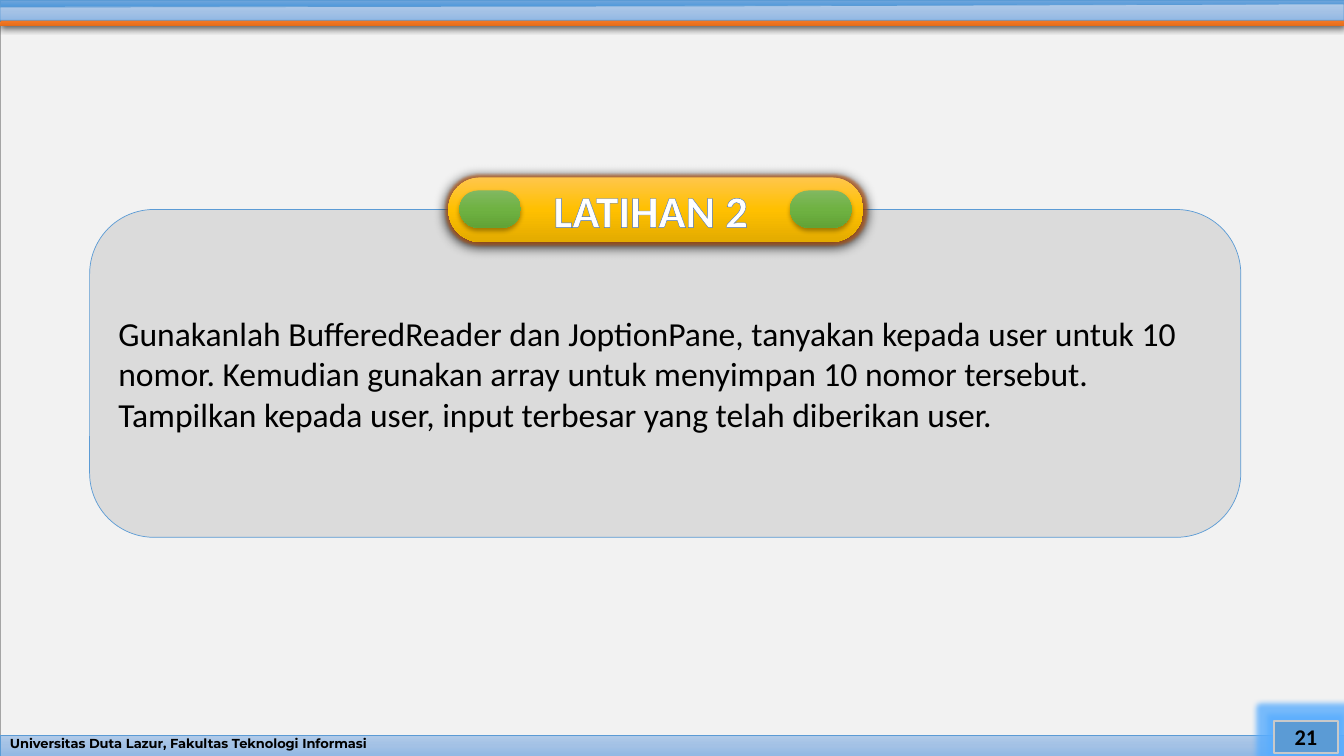
from dataclasses import dataclass
from typing import Optional, Union

from lxml import etree
from pptx import Presentation
from pptx import util as u
from pptx.dml.color import RGBColor
from pptx.enum import shapes, text
from pptx.oxml import ns

SLIDE_W, SLIDE_H = 33.87, 19.05

BLACK = RGBColor(0x00, 0x00, 0x00)
WHITE = RGBColor(0xFF, 0xFF, 0xFF)
PAPER = RGBColor(0xF2, 0xF2, 0xF2)
PANEL_GREY = RGBColor(0xDB, 0xDB, 0xDB)
BADGE_EDGE = RGBColor(0xC9, 0xC9, 0xC9)
PAPER_EDGE = RGBColor(0xA5, 0xA5, 0xA5)
BLUE = RGBColor(0x5B, 0x9B, 0xD5)
GLOW_BLUE = RGBColor(0x5A, 0xAE, 0xFF)
GLOW_RUST = RGBColor(0xC5, 0x5A, 0x11)
OUTLINE_BLUE = RGBColor(0x44, 0x72, 0xC4)


@dataclass(frozen=True)
class Gradient:
    """Colours from top to bottom."""
    top: RGBColor
    middle: RGBColor
    bottom: RGBColor


ORANGE = Gradient(RGBColor(0xF1, 0x8C, 0x57), RGBColor(0xF6, 0x7B, 0x28), RGBColor(0xE5, 0x6C, 0x19))
PALE_BLUE = Gradient(RGBColor(0xB1, 0xCB, 0xE9), RGBColor(0xA3, 0xC1, 0xE5), RGBColor(0x93, 0xB9, 0xE4))
DEEP_BLUE = Gradient(RGBColor(0x71, 0xA6, 0xDB), RGBColor(0x55, 0x9B, 0xDB), RGBColor(0x44, 0x8A, 0xCA))
GOLD = Gradient(RGBColor(0xFF, 0xC6, 0x4B), RGBColor(0xFF, 0xC0, 0x00), RGBColor(0xE3, 0xAB, 0x00))
GREEN = Gradient(RGBColor(0x81, 0xB8, 0x61), RGBColor(0x6F, 0xB2, 0x42), RGBColor(0x62, 0xA3, 0x36))


@dataclass(frozen=True)
class Shadow:
    alpha: int
    blur: float
    distance: float


@dataclass(frozen=True)
class Glow:
    color: RGBColor
    radius: float
    alpha: int


@dataclass(frozen=True)
class Look:
    fill: Union[RGBColor, Gradient]
    edge: Optional[RGBColor] = None
    edge_width: float = 0.5
    shadow: Optional[Shadow] = None
    glow: Optional[Glow] = None


@dataclass(frozen=True)
class Block:
    box: tuple
    look: Look
    rounding: Optional[float] = None


def add_xml(parent, tag: str, **attributes):
    return etree.SubElement(parent, ns.qn(tag), {k: str(v) for k, v in attributes.items()})


def add_color(parent, color: RGBColor, alpha: int = 100) -> None:
    srgb = add_xml(parent, "a:srgbClr", val=color)
    if alpha < 100:
        add_xml(srgb, "a:alpha", val=alpha * 1000)


def dress(shape, look: Look) -> None:
    """Apply fill, edge, glow and shadow."""
    if isinstance(look.fill, Gradient):
        shape.fill.gradient()
        shape.fill.gradient_angle = 270
        stops = shape.element.spPr.find(".//" + ns.qn("a:gsLst"))
        for stop in list(stops):
            stops.remove(stop)
        for i, color in enumerate((look.fill.top, look.fill.middle, look.fill.bottom)):
            add_color(add_xml(stops, "a:gs", pos=i * 50000), color)
    else:
        shape.fill.solid()
        shape.fill.fore_color.rgb = look.fill
    if look.edge is None:
        shape.line.fill.background()
    else:
        shape.line.color.rgb = look.edge
        shape.line.width = u.Pt(look.edge_width)
    shape.shadow.inherit = False
    effects = shape.element.spPr.find(ns.qn("a:effectLst"))
    if look.glow:
        glow = add_xml(effects, "a:glow", rad=u.Pt(look.glow.radius))
        add_color(glow, look.glow.color, look.glow.alpha)
    if look.shadow:
        cast = add_xml(effects, "a:outerShdw", blurRad=u.Pt(look.shadow.blur),
                       dist=u.Pt(look.shadow.distance), dir=5400000,
                       algn="ctr", rotWithShape=0)
        add_color(cast, BLACK, look.shadow.alpha)


def add_block(slide, block: Block):
    kind = shapes.MSO_SHAPE.RECTANGLE
    if block.rounding is not None:
        kind = shapes.MSO_SHAPE.ROUNDED_RECTANGLE
    shape = slide.shapes.add_shape(kind, *map(u.Cm, block.box))
    if block.rounding is not None:
        shape.adjustments[0] = block.rounding
    dress(shape, block.look)
    return shape


def add_strip(slide, points: tuple, look: Look) -> None:
    start, *rest = [(u.Cm(x), u.Cm(y)) for x, y in points]
    builder = slide.shapes.build_freeform(*start)
    builder.add_line_segments(rest, close=True)
    dress(builder.convert_to_shape(), look)


def write(shape, words: str, size: float, color: RGBColor = BLACK, bold: bool = False,
          font: str = "Calibri", align=text.PP_ALIGN.CENTER, spacing: float = 1.0):
    frame = shape.text_frame
    paragraph = frame.paragraphs[0]
    run = paragraph.add_run()
    run.text = words
    formats = {
        frame: {"word_wrap": True, "vertical_anchor": text.MSO_ANCHOR.MIDDLE},
        paragraph: {"alignment": align, "line_spacing": spacing},
        run.font: {"name": font, "size": u.Pt(size), "bold": bold},
        run.font.color: {"rgb": color},
    } if run.font.fill.solid() is None else {}
    for target, values in formats.items():
        for name, value in values.items():
            setattr(target, name, value)
    return run


def outline(run, color: RGBColor, width: float) -> None:
    line = etree.Element(ns.qn("a:ln"), {"w": str(u.Pt(width))})
    add_color(add_xml(line, "a:solidFill"), color)
    run.font._element.insert(0, line)


def main() -> None:
    deck = Presentation()
    deck.slide_width, deck.slide_height = u.Cm(SLIDE_W), u.Cm(SLIDE_H)
    slide = deck.slides.add_slide(deck.slide_layouts[6])

    # Background and top bands
    add_block(slide, Block((0, 0.1, SLIDE_W, 18.95), Look(PAPER, PAPER_EDGE)))
    add_strip(slide, ((SLIDE_W, 0.66), (0, 0.66), (0.08, 0.33), (SLIDE_W, 0.33)),
              Look(ORANGE, shadow=Shadow(63, 4.5, 1.5)))
    footer_box = (0, 18.52, SLIDE_W, 0.53)
    add_block(slide, Block(footer_box, Look(PALE_BLUE, BLUE)))
    add_block(slide, Block((0, 0, SLIDE_W, 0.28), Look(DEEP_BLUE, BLUE)))
    add_strip(slide, ((SLIDE_W, 0.51), (0, 0.51), (0, 0.18), (18.6, 0.15), (SLIDE_W, 0.1)),
              Look(PALE_BLUE, BLUE))

    # Footer and page number
    footer = slide.shapes.add_textbox(*map(u.Cm, footer_box))
    write(footer, "Universitas Duta Lazur, Fakultas Teknologi Informasi", 9.3, bold=True,
          font="Montserrat", align=text.PP_ALIGN.LEFT, spacing=0.7)
    page = add_block(slide, Block((32.11, 18.16, 1.6, 0.81),
                                  Look(BLUE, BADGE_EDGE, 1.5, glow=Glow(GLOW_BLUE, 8, 80))))
    write(page, "21", 16, bold=True)

    # Exercise panel
    exercise = add_block(slide, Block((2.26, 5.28, 29.01, 8.26), Look(PANEL_GREY, BLUE), 0.196))
    write(exercise, "Gunakanlah BufferedReader dan JoptionPane, tanyakan kepada user untuk 10 "
          "nomor. Kemudian gunakan array untuk menyimpan 10 nomor tersebut. "
          "Tampilkan kepada user, input terbesar yang telah diberikan user.",
          24, align=text.PP_ALIGN.LEFT)

    # Heading with a green pill at each end
    heading = add_block(slide, Block((11.3, 4.47, 10.46, 1.63),
                                     Look(GOLD, shadow=Shadow(100, 8.5, 1),
                                          glow=Glow(GLOW_RUST, 4, 60)), 0.5))
    outline(write(heading, "LATIHAN 2 ", 32, WHITE, bold=True), OUTLINE_BLUE, 0.8)
    for left in (11.58, 19.91):
        add_block(slide, Block((left, 4.8, 1.55, 0.94),
                               Look(GREEN, shadow=Shadow(32, 3.5, 2.2)), 0.5))

    deck.save("out.pptx")


if __name__ == "__main__":
    main()
